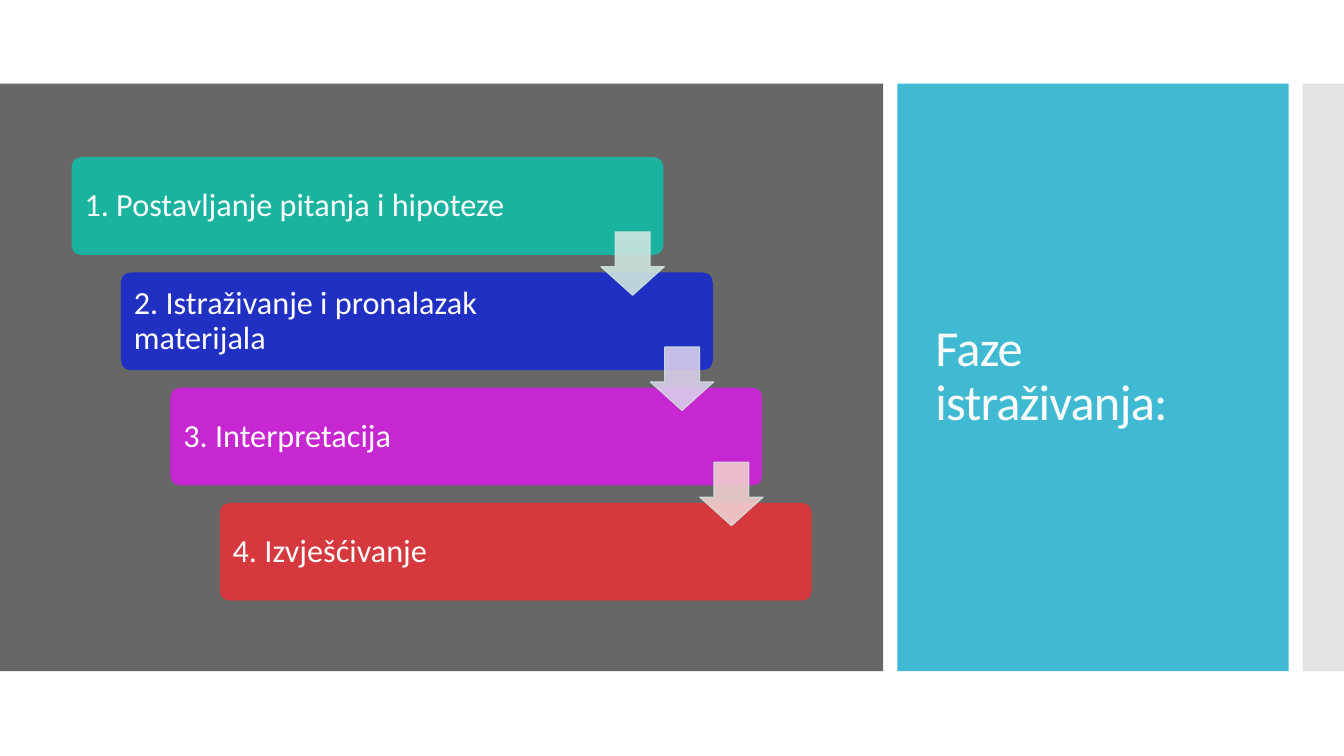
from lxml import etree
from pptx import Presentation, util as u
from pptx.dml.color import RGBColor
from pptx.enum import shapes, text
from pptx.oxml.ns import qn

COLOURS = {
    "page": "FFFFFF",
    "text": "FFFFFF",
    "panel": "676767",
    "title": "40BAD2",
    "edge": "C8C8C8",
    "arrow_line": "CDE5DF",
}
PHASES = [
    ("1. Postavljanje pitanja i hipoteze", "1AB39F", "CDE5DF"),
    ("2. Istraživanje i pronalazak materijala", "2030C2", "D8CDEA"),
    ("3. Interpretacija", "C727D1", "EFCECF"),
    ("4. Izvješćivanje", "D5393D", None),
]
STEP_X, STEP_Y = 0.49, 1.143
PANEL_TOP, PANEL_HEIGHT = 0.83, 5.83


def paint(fill, colour, opacity=100):
    """Apply a solid colour with an opacity in percent."""
    fill.solid()
    fill.fore_color.rgb = RGBColor.from_string(colour)
    if opacity < 100:
        for rgb in fill._xPr.iter(qn("a:srgbClr")):
            etree.SubElement(rgb, qn("a:alpha"), val=str(opacity * 1000))


def add_block(slide, preset, box, colour, opacity=100, adjust=(), outline=None):
    """Add a flat preset shape, outlined only when a colour is given."""
    block = slide.shapes.add_shape(preset, *map(u.Inches, box))
    block.shadow.inherit = False
    paint(block.fill, colour, opacity)
    for index, value in enumerate(adjust):
        block.adjustments[index] = value
    if outline:
        paint(block.line.fill, outline, opacity)
        block.line.width = u.Pt(0.75)
    else:
        block.line.fill.background()


def add_text(slide, wording, box, size, inset=0.1, after=0, tracking=None):
    """Add wrapped, vertically centred text."""
    frame = slide.shapes.add_textbox(*map(u.Inches, box)).text_frame
    frame.word_wrap = True
    frame.vertical_anchor = text.MSO_ANCHOR.MIDDLE
    frame.margin_left = frame.margin_right = u.Inches(0.1)
    frame.margin_top = frame.margin_bottom = u.Inches(inset)
    paragraph = frame.paragraphs[0]
    paragraph.line_spacing = 0.9
    paragraph.space_after = u.Pt(after)
    run = paragraph.add_run()
    run.text = wording
    run.font.name = "Calibri"
    run.font.size = u.Pt(size)
    run.font.color.rgb = RGBColor.from_string(COLOURS["text"])
    if tracking:
        run.font._element.set("spc", str(round(tracking * 100)))


def add_phase(slide, index, wording, colour):
    """Add one stair of the phase sequence."""
    left, top = 0.71 + index * STEP_X, 1.56 + index * STEP_Y
    add_block(slide, shapes.MSO_SHAPE.ROUNDED_RECTANGLE,
              (left, top, 5.87, 0.97), colour, adjust=[0.1])
    add_text(slide, wording, (left + 0.03, top + 0.03, 4.7, 0.91), 23, after=8)


def add_phase_arrow(slide, index, colour):
    """Add the arrow leading from one stair to the next."""
    box = (5.96 + index * STEP_X, 2.3 + index * STEP_Y, 0.63, 0.63)
    add_block(slide, shapes.MSO_SHAPE.DOWN_ARROW, box, colour, opacity=90,
              adjust=[0.45, 0.55], outline=COLOURS["arrow_line"])
    arrow = slide.shapes[-1]
    arrow.adjustments[0], arrow.adjustments[1] = 0.55, 0.45


def main():
    """Build and save the slide."""
    deck = Presentation()
    deck.slide_width, deck.slide_height = u.Inches(13.33), u.Inches(7.5)
    slide = deck.slides.add_slide(deck.slide_layouts[6])
    paint(slide.background.fill, COLOURS["page"])

    for part, left, width, opacity in [
        ("panel", 0, 8.76, 100), ("title", 8.9, 3.88, 100), ("edge", 12.92, 0.41, 50),
    ]:
        add_block(slide, shapes.MSO_SHAPE.RECTANGLE,
                  (left, PANEL_TOP, width, PANEL_HEIGHT), COLOURS[part], opacity)
    add_text(slide, "Faze istraživanja:", (9.18, 1.23, 3.22, 5.03), 36,
             inset=0.05, tracking=-0.6)

    for index, (wording, colour, _) in enumerate(PHASES):
        add_phase(slide, index, wording, colour)
    for index, (_, _, arrow_colour) in enumerate(PHASES[:-1]):
        add_phase_arrow(slide, index, arrow_colour)
    deck.save("out.pptx")


if __name__ == "__main__":
    main()
